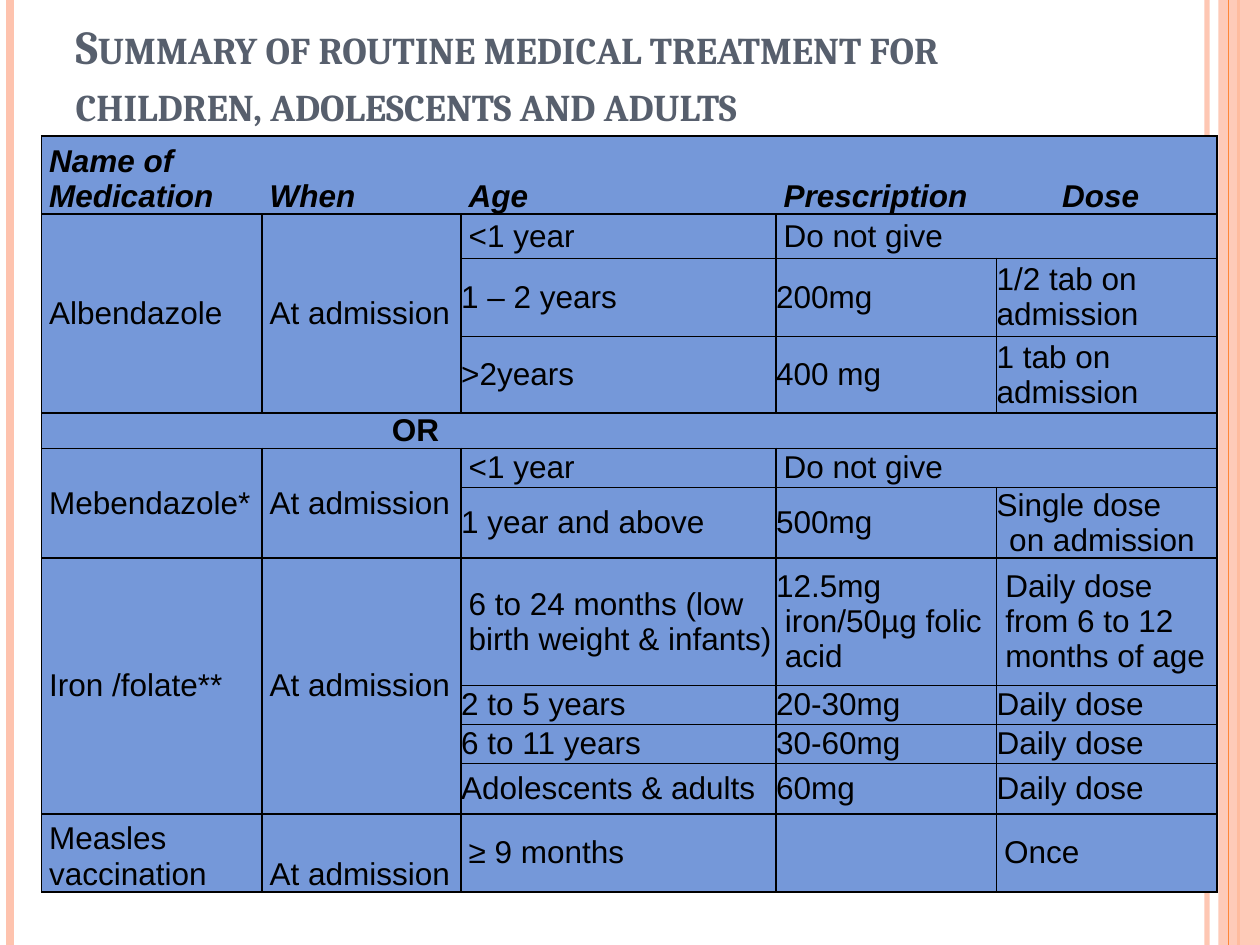
from dataclasses import dataclass

from lxml.etree import SubElement
from pptx import Presentation
from pptx.dml.color import RGBColor
from pptx.enum.shapes import MSO_CONNECTOR as Connector, MSO_SHAPE as Shape
from pptx.enum.text import MSO_ANCHOR as Anchor, MSO_AUTO_SIZE as AutoSize, PP_ALIGN as Align
from pptx.oxml.ns import qn
from pptx.util import Inches, Pt

PEACH = RGBColor(0xFE, 0xC3, 0xAE)
ORANGE = RGBColor(0xFE, 0x86, 0x37)
SLATE = RGBColor(0x57, 0x5F, 0x6D)
BLUE = RGBColor(0x75, 0x98, 0xD9)
BLACK = RGBColor(0, 0, 0)

TITLE = "Summary of routine medical treatment for children, adolescents and adults"
PLAIN_STYLE = "{2D5ABB26-0587-4C30-8999-92F81FD0307C}"
COLUMN_WIDTHS = [1.75, 1.58, 2.5, 1.75, 0.42, 1.33]
ROW_HEIGHTS = [0.62, 0.35, 0.62, 0.61, 0.28, 0.31, 0.56, 1.01, 0.31, 0.31, 0.4, 0.62]
INDENT = 0.06


@dataclass
class Entry:
    row: int
    column: int
    lines: list
    indents: tuple = (0,)
    span: tuple = (1, 1)
    anchor: Anchor = Anchor.MIDDLE
    align: Align = Align.LEFT
    bold: bool = False
    italic: bool = False


HEADINGS = [
    (0, "Name of Medication", INDENT, 1),
    (1, "When", INDENT, 1),
    (2, "Age", INDENT, 1),
    (3, "Prescription", INDENT, 2),
    (5, "Dose", 0.1, 1),
]
MEDICATIONS = [(1, 3, "Albendazole"), (5, 2, "Mebendazole*"), (7, 4, "Iron /folate**")]
NOT_GIVEN_ROWS = [1, 5]
DOSES = [
    (2, "1 – 2 years", "200mg", "1/2 tab on admission"),
    (3, ">2years", "400 mg", "1 tab on admission"),
    (8, "2 to 5 years", "20-30mg", "Daily dose"),
    (9, "6 to 11 years", "30-60mg", "Daily dose"),
    (10, "Adolescents & adults", "60mg", "Daily dose"),
]
SINGLE_ENTRIES = [
    Entry(4, 0, ["OR"], (2.78,), (1, 6), bold=True),
    Entry(6, 2, ["1 year and above"]),
    Entry(6, 3, ["500mg"]),
    Entry(6, 4, ["Single dose", "on admission"], (0, 0.1), (1, 2)),
    Entry(7, 2, ["6 to 24 months (low birth weight & infants)"], (INDENT,)),
    Entry(7, 3, ["12.5mg", "iron/50µg folic", "acid"], (0, 0.07, 0.07)),
    Entry(7, 4, ["Daily dose from 6 to 12 months of age"], (0.07,), (1, 2)),
    Entry(11, 0, ["Measles vaccination"], (INDENT,), anchor=Anchor.BOTTOM, align=Align.JUSTIFY),
    Entry(11, 1, ["At admission"], (INDENT,), anchor=Anchor.BOTTOM, align=Align.JUSTIFY),
    Entry(11, 2, ["≥ 9 months"], (INDENT,), align=Align.JUSTIFY),
    Entry(11, 4, ["Once"], (INDENT,), (1, 2), align=Align.JUSTIFY),
]


def table_entries():
    entries = list(SINGLE_ENTRIES)
    for column, text, indent, width in HEADINGS:
        entries.append(Entry(0, column, [text], (indent,), (1, width),
                             Anchor.BOTTOM, bold=True, italic=True))
    for row, height, name in MEDICATIONS:
        for column, text in enumerate([name, "At admission"]):
            entries.append(Entry(row, column, [text], (INDENT,), (height, 1)))
    for row in NOT_GIVEN_ROWS:
        entries.append(Entry(row, 2, ["<1 year"], (INDENT,)))
        entries.append(Entry(row, 3, ["Do not give"], (INDENT,), (1, 3)))
    for row, age, prescription, dose in DOSES:
        entries.append(Entry(row, 2, [age]))
        entries.append(Entry(row, 3, [prescription]))
        entries.append(Entry(row, 4, [dose], span=(1, 2)))
    return entries


def set_opacity(fill_parent, percent):
    color = next(fill_parent.iter(qn("a:srgbClr")))
    SubElement(color, qn("a:alpha"), val=str(percent * 1000))


def add_stripe(slide, x, color, width, opacity=100):
    stripe = slide.shapes.add_connector(
        Connector.STRAIGHT, Inches(x), Inches(0), Inches(x), Inches(7.5))
    stripe.line.color.rgb = color
    stripe.line.width = Pt(width)
    properties = stripe._element.spPr
    SubElement(properties, qn("a:effectLst"))
    if opacity < 100:
        set_opacity(properties, opacity)


def add_band(slide):
    band = slide.shapes.add_shape(
        Shape.RECTANGLE, Inches(9.67), Inches(0), Inches(0.33), Inches(7.5))
    band.shadow.inherit = False
    band.fill.solid()
    band.fill.fore_color.rgb = PEACH
    band.line.fill.background()
    set_opacity(band._element.spPr, 87)


def add_run(paragraph, text, font_name, size, color, bold=False, italic=False):
    run = paragraph.add_run()
    run.text = text
    font = run.font
    font.name, font.size, font.bold, font.italic = font_name, Pt(size), bold, italic
    font.color.rgb = color
    return run


def fill_title(slide):
    title = slide.shapes.title
    title.left, title.top = Inches(0.5), Inches(0.07)
    title.width, title.height = Inches(8.17), Inches(1.02)
    frame = title.text_frame
    frame.word_wrap = True
    frame.auto_size = AutoSize.NONE
    frame.vertical_anchor = Anchor.BOTTOM
    paragraph = frame.paragraphs[0]
    paragraph.alignment = Align.LEFT
    run = add_run(paragraph, TITLE, "Cambria", 27, SLATE, bold=True)
    run.font._element.set("cap", "small")


def add_borders(cell, sides):
    properties = cell._tc.get_or_add_tcPr()
    for side in sides:
        line = SubElement(properties, qn("a:ln" + side), w=str(Pt(1)))
        SubElement(SubElement(line, qn("a:solidFill")), qn("a:srgbClr"), val=str(BLACK))


def border_sides(cell, row, column):
    last = column == len(COLUMN_WIDTHS) - 1
    if cell.is_spanned:
        return "R" if last else ""
    if row == 0:
        return ("L" if column == 0 else "") + ("R" if last else "") + "TB"
    return "LRTB"


def write_entry(table, entry):
    cell = table.cell(entry.row, entry.column)
    height, width = entry.span
    if entry.span != (1, 1):
        cell.merge(table.cell(entry.row + height - 1, entry.column + width - 1))
    cell.vertical_anchor = entry.anchor
    frame = cell.text_frame
    for index, (text, indent) in enumerate(zip(entry.lines, entry.indents)):
        paragraph = frame.add_paragraph() if index else frame.paragraphs[0]
        paragraph.alignment = entry.align
        properties = paragraph._p.get_or_add_pPr()
        properties.set("marL", str(Inches(indent)))
        properties.set("indent", "0")
        add_run(paragraph, text, "Arial", 18, BLACK, entry.bold, entry.italic)


def add_treatment_table(slide):
    frame = slide.shapes.add_table(
        len(ROW_HEIGHTS), len(COLUMN_WIDTHS), Inches(0.33), Inches(1.08),
        Inches(sum(COLUMN_WIDTHS)), Inches(sum(ROW_HEIGHTS)))
    table = frame.table
    table.first_row = table.horz_banding = False
    next(table._tbl.iter(qn("a:tableStyleId"))).text = PLAIN_STYLE
    for column, width in zip(table.columns, COLUMN_WIDTHS):
        column.width = Inches(width)
    for row, height in zip(table.rows, ROW_HEIGHTS):
        row.height = Inches(height)
    for entry in table_entries():
        write_entry(table, entry)
    for row in range(len(ROW_HEIGHTS)):
        for column in range(len(COLUMN_WIDTHS)):
            cell = table.cell(row, column)
            cell.margin_left = cell.margin_right = 0
            cell.margin_top = cell.margin_bottom = 0
            add_borders(cell, border_sides(cell, row, column))
            cell.fill.solid()
            cell.fill.fore_color.rgb = BLUE


def main():
    presentation = Presentation()
    presentation.slide_width, presentation.slide_height = Inches(10), Inches(7.5)
    slide = presentation.slides.add_slide(presentation.slide_layouts[5])
    add_stripe(slide, 9.58, PEACH, 3, 93)
    add_stripe(slide, 0.08, PEACH, 4.5)
    add_stripe(slide, 9.83, ORANGE, 1.5)
    add_band(slide)
    add_stripe(slide, 9.75, ORANGE, 0.75)
    fill_title(slide)
    add_treatment_table(slide)
    presentation.save("out.pptx")


if __name__ == "__main__":
    main()
